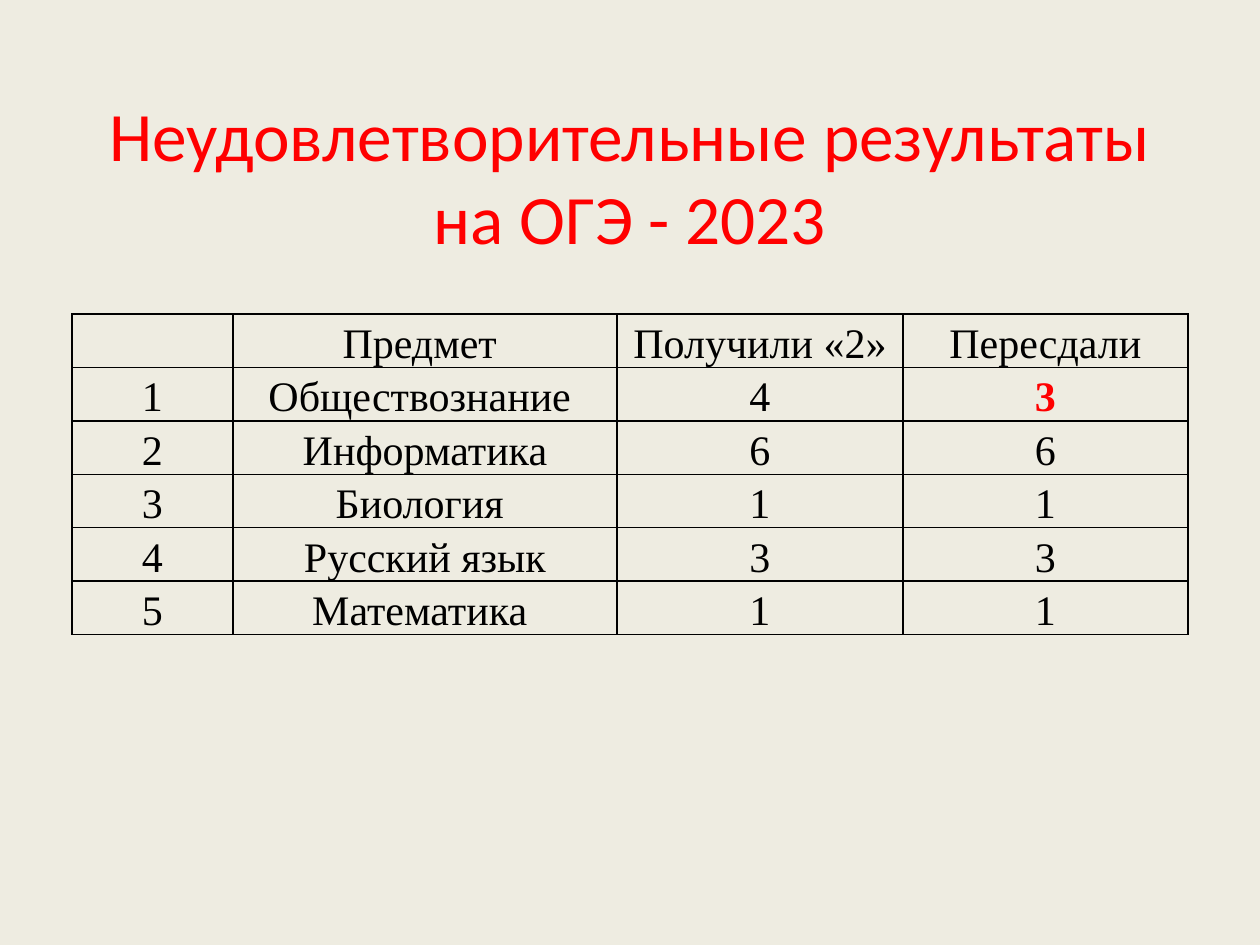
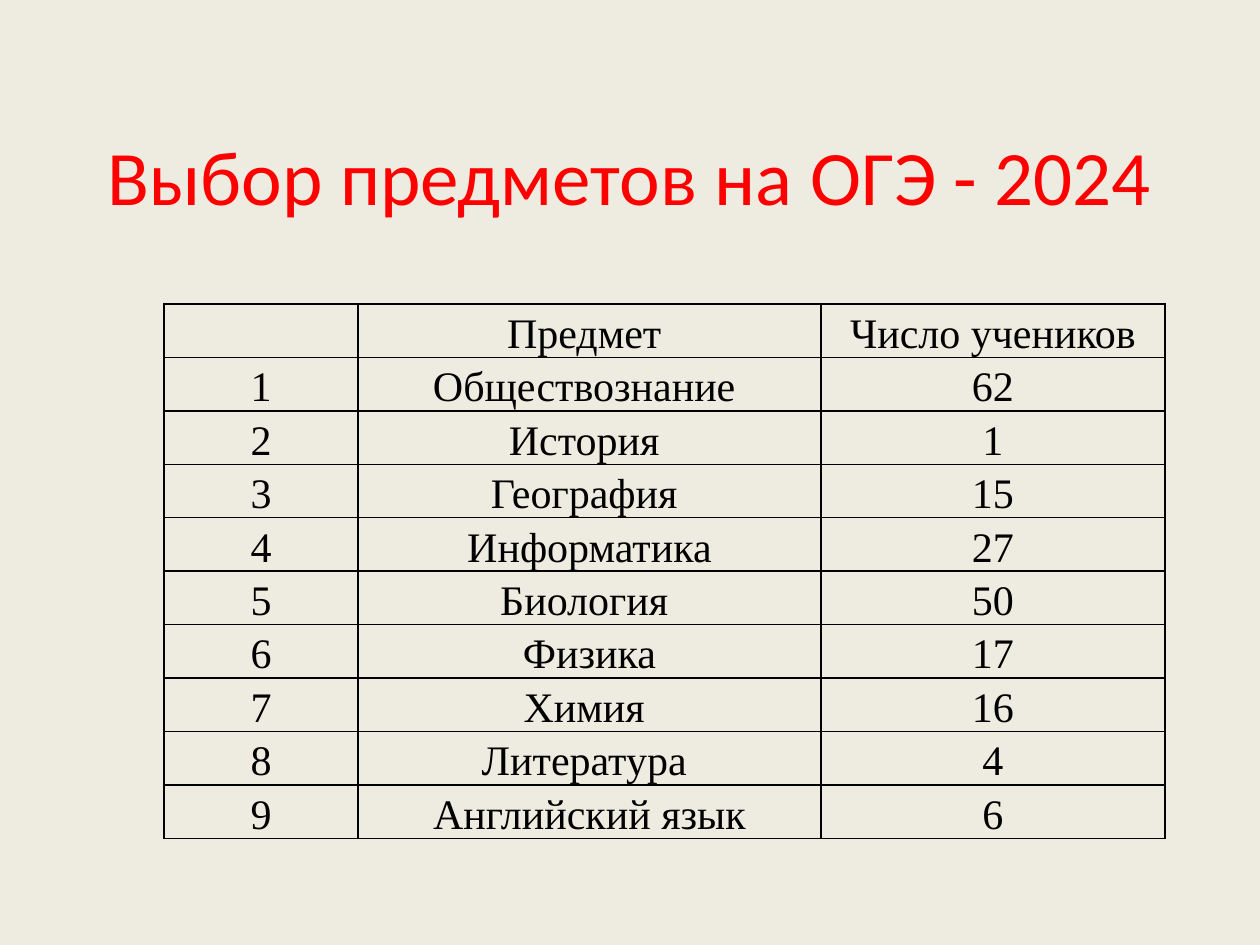
from lxml import etree
from pptx import Presentation
from pptx.dml.color import RGBColor
from pptx.enum.text import MSO_ANCHOR as ANCHOR, PP_ALIGN as ALIGN
from pptx.oxml.ns import qn
from pptx.util import Pt

PX = 914400 / 126  # EMU in one pixel
COLORS = {"background": "EEECE1", "accent": "FF0000", "ink": "000000"}
TITLE_FONT, TABLE_FONT = "Calibri", "Times New Roman"
TITLE_BOX = (63, 96, 1134, 158)
ROW_HEIGHT = 53
CELL_INSET = 9


def px(n):
    return round(n * PX)


def rgb(name):
    return RGBColor.from_string(COLORS[name])


def write(tf, text, *, font, size, color="ink", bold=False,
          spacing=None, after=None):
    """Put one centred run of text in a text frame."""
    p = tf.paragraphs[0]
    p.alignment = ALIGN.CENTER
    if spacing is not None:
        p.line_spacing = spacing
    if after is not None:
        p.space_after = Pt(after)
    r = p.add_run()
    r.text = text
    r.font.name, r.font.size, r.font.bold = font, Pt(size), bold
    r.font.color.rgb = rgb(color)


def add_titled_slide(prs, title, size):
    s = prs.slides.add_slide(prs.slide_layouts[5])
    sp = s.shapes.title
    sp.left, sp.top, sp.width, sp.height = map(px, TITLE_BOX)
    tf = sp.text_frame
    tf.word_wrap = True
    tf.vertical_anchor = ANCHOR.MIDDLE
    write(tf, title, font=TITLE_FONT, size=size, color="accent")
    return s


def set_borders(cell, width=1):
    tc_pr = cell._tc.get_or_add_tcPr()
    for side in ("lnL", "lnR", "lnT", "lnB"):
        ln = etree.SubElement(tc_pr, qn(f"a:{side}"), w=str(Pt(width)))
        fill = etree.SubElement(ln, qn("a:solidFill"))
        etree.SubElement(fill, qn("a:srgbClr"), val=COLORS["ink"])


def add_results_table(s, left, top, widths, header, records, highlight=None):
    """Number the records and draw them; highlight is a (row, column) pair."""
    rows = [("", *header)]
    rows += [(str(n), *record) for n, record in enumerate(records, 1)]
    frame = s.shapes.add_table(len(rows), len(widths), px(left), px(top),
                               px(sum(widths)), px(ROW_HEIGHT * len(rows)))
    table = frame.table
    table.first_row = table.horz_banding = False
    for column, width in zip(table.columns, widths):
        column.width = px(width)
    for i, row in enumerate(rows):
        for j, text in enumerate(row):
            cell = table.cell(i, j)
            set_borders(cell)
            cell.fill.background()
            cell.margin_left = cell.margin_right = px(CELL_INSET)
            cell.margin_top = cell.margin_bottom = 0
            if text:
                marked = (i, j) == highlight
                write(cell.text_frame, text, font=TABLE_FONT, size=24,
                      color="accent" if marked else "ink", bold=marked,
                      spacing=1.15, after=10)


def main():
    prs = Presentation()
    prs.slide_width, prs.slide_height = px(1260), px(945)
    bg = prs.slide_master.background.fill
    bg.solid()
    bg.fore_color.rgb = rgb("background")

    # Failed exams in 2023
    s = add_titled_slide(
        prs, "Неудовлетворительные результаты на ОГЭ - 2023", 39.6)
    add_results_table(
        s, 72, 314, (161, 384, 286, 285),
        ("Предмет ", "Получили «2»", "Пересдали"),
        [("Обществознание ", "4", "3"),
         ("Информатика", "6", "6"),
         ("Биология ", "1", "1"),
         ("Русский язык", "3", "3"),
         ("Математика ", "1", "1")],
        highlight=(1, 3))

    # Subjects chosen for 2024
    s = add_titled_slide(prs, "Выбор предметов на ОГЭ - 2024", 44)
    add_results_table(
        s, 164, 304, (194, 463, 344),
        ("Предмет ", "Число учеников"),
        [("Обществознание ", "62"),
         ("История ", "1"),
         ("География ", "15"),
         ("Информатика", "27"),
         ("Биология ", "50"),
         ("Физика", "17"),
         ("Химия ", "16"),
         ("Литература ", "4"),
         ("Английский язык", "6")])

    prs.save("out.pptx")


if __name__ == "__main__":
    main()
